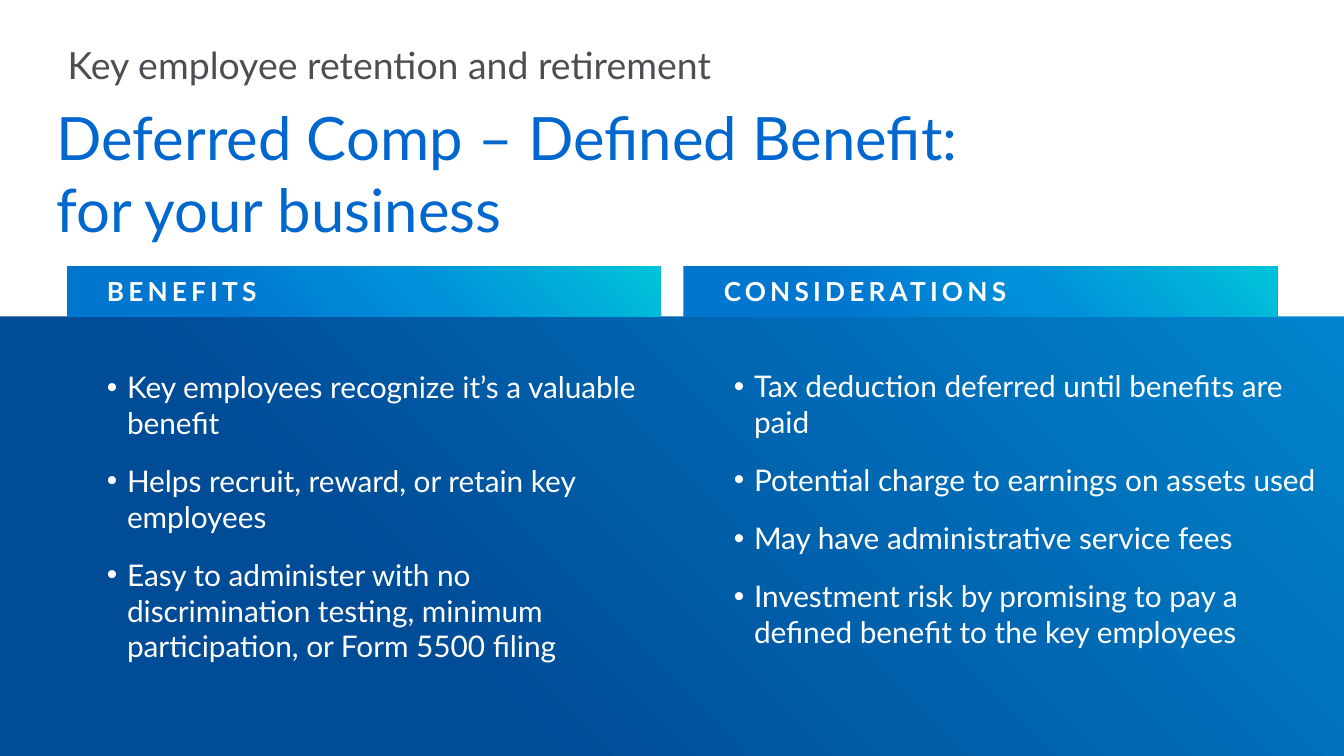
from dataclasses import dataclass

from lxml.etree import SubElement
from pptx import Presentation
from pptx.dml.color import RGBColor
from pptx.enum.shapes import MSO_SHAPE
from pptx.enum.text import MSO_ANCHOR, MSO_AUTO_SIZE, PP_ALIGN
from pptx.oxml.ns import qn
from pptx.util import Inches, Pt


@dataclass(frozen=True)
class Theme:
    font: str = "Lato"
    white: str = "FFFFFF"
    title_color: str = "0067CF"
    subtitle_color: str = "4D4E53"
    backdrop: tuple = ((25, "004C97"), (99, "0091DA"))
    banner: tuple = ((25, "0076CF"), (60, "0091DA"), (100, "00C3D9"))
    gradient_angle: int = 45
    title_size: float = 42.7
    subtitle_size: float = 26.7
    bullet_size: float = 21.3
    banner_size: float = 18.7
    bullet_gap: int = 16
    bullet_indent: float = 0.2
    letter_spacing: int = 3


class SlideBuilder:
    def __init__(self, presentation, theme):
        self.theme = theme
        self.width = presentation.slide_width
        self.height = presentation.slide_height
        self.slide = presentation.slides.add_slide(presentation.slide_layouts[5])

    def box(self, left, top, width, height):
        return (
            round(self.width * left / 100),
            round(self.height * top / 100),
            round(self.width * width / 100),
            round(self.height * height / 100),
        )

    def style(self, paragraph, size, color, bold=False):
        paragraph.alignment = PP_ALIGN.LEFT
        paragraph.font.name = self.theme.font
        paragraph.font.size = Pt(size)
        paragraph.font.bold = bold
        paragraph.font.color.rgb = RGBColor.from_string(color)

    def frame(self, shape, margins=(0, 0, 0, 0), anchor=MSO_ANCHOR.TOP):
        frame = shape.text_frame
        frame.word_wrap = True
        frame.auto_size = MSO_AUTO_SIZE.NONE
        frame.vertical_anchor = anchor
        (frame.margin_left, frame.margin_top,
         frame.margin_right, frame.margin_bottom) = map(Inches, margins)
        return frame

    def rectangle(self, area, color=None, gradient=()):
        shape = self.slide.shapes.add_shape(MSO_SHAPE.RECTANGLE, *self.box(*area))
        shape.shadow.inherit = False
        shape.line.fill.background()
        if not gradient:
            shape.fill.solid()
            shape.fill.fore_color.rgb = RGBColor.from_string(color)
            return shape
        shape.fill.gradient()
        shape.fill.gradient_angle = self.theme.gradient_angle
        stops = next(shape.element.iter(qn("a:gsLst")))
        stops.clear()
        for position, stop_color in gradient:
            stop = SubElement(stops, qn("a:gs"), pos=str(position * 1000))
            SubElement(stop, qn("a:srgbClr"), val=stop_color)
        return shape

    def title(self, text, area):
        title = self.slide.shapes.title
        title.left, title.top, title.width, title.height = self.box(*area)
        title.element.getparent().append(title.element)
        paragraph = self.frame(title).paragraphs[0]
        paragraph.text = text
        self.style(paragraph, self.theme.title_size, self.theme.title_color)

    def subtitle(self, text, area):
        shape = self.slide.shapes.add_textbox(*self.box(*area))
        paragraph = self.frame(shape).paragraphs[0]
        paragraph.text = text
        self.style(paragraph, self.theme.subtitle_size, self.theme.subtitle_color)

    def banner(self, text, area):
        shape = self.rectangle(area, gradient=self.theme.banner)
        frame = self.frame(shape, (0.4, 0.07, 0.13, 0.07), MSO_ANCHOR.MIDDLE)
        paragraph = frame.paragraphs[0]
        paragraph.text = text
        self.style(paragraph, self.theme.banner_size, self.theme.white, bold=True)
        properties = paragraph.runs[0].font
        properties.bold = True
        run_properties = next(paragraph.runs[0]._r.iter(qn("a:rPr")))
        run_properties.set("spc", str(self.theme.letter_spacing * 100))

    def bullets(self, items, area):
        shape = self.slide.shapes.add_textbox(*self.box(*area))
        frame = self.frame(shape)
        indent = Inches(self.theme.bullet_indent)
        for index, item in enumerate(items):
            paragraph = frame.add_paragraph() if index else frame.paragraphs[0]
            paragraph.text = item
            properties = paragraph._p.get_or_add_pPr()
            properties.set("marL", str(indent))
            properties.set("indent", str(-indent))
            SubElement(properties, qn("a:buFont"), typeface="Arial")
            SubElement(properties, qn("a:buChar"), char="•")
            if index:
                paragraph.space_before = Pt(self.theme.bullet_gap)
            self.style(paragraph, self.theme.bullet_size, self.theme.white)


def main():
    presentation = Presentation()
    presentation.slide_width = Inches(13.33)
    presentation.slide_height = Inches(7.5)
    theme = Theme()
    builder = SlideBuilder(presentation, theme)

    header_bottom, banner_height = 41.87, 6.67
    builder.rectangle((0, 0, 100, 100), gradient=theme.backdrop)
    builder.rectangle((0, 0, 100, header_bottom), theme.white)
    builder.title("Deferred Comp – Defined Benefit:\vfor your business",
                  (4.2, 13.33, 90, 15.73))
    builder.subtitle("Key employee retention and retirement", (5.03, 5.6, 90, 6.4))

    columns = (
        ("BENEFITS", (7.95, 48.8, 41.18, 36.4), (
            "Key employees recognize it’s a valuable benefit",
            "Helps recruit, reward, or retain key employees",
            "Easy to administer with no discrimination testing, minimum "
            "participation, or Form 5500 filing",
        )),
        ("CONSIDERATIONS", (54.6, 48.67, 44.18, 36.4), (
            "Tax deduction deferred until benefits are paid",
            "Potential charge to earnings on assets used",
            "May have administrative service fees",
            "Investment risk by promising to pay a defined benefit "
            "to the key employees",
        )),
    )
    for index, (heading, bullet_area, items) in enumerate(columns):
        builder.banner(heading, (4.95 + index * 45.9, header_bottom - banner_height,
                                 44.18, banner_height))
        builder.bullets(items, bullet_area)

    presentation.save("out.pptx")


if __name__ == "__main__":
    main()
